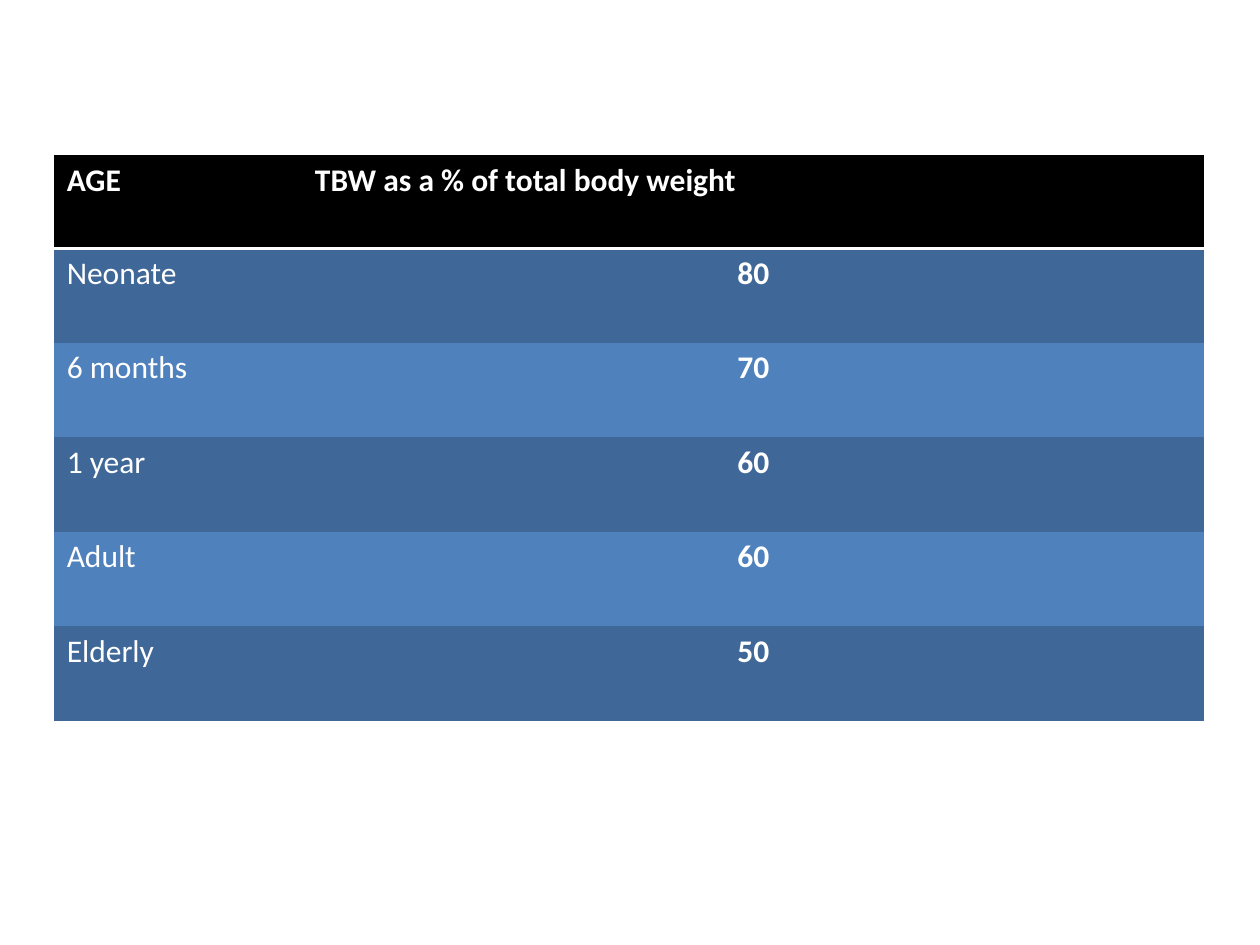
from lxml import etree
from pptx import Presentation
from pptx.dml.color import RGBColor as RGB
from pptx.enum.text import PP_ALIGN as ALIGN
from pptx.oxml import parse_xml
from pptx.oxml.ns import nsdecls, qn
from pptx.util import Inches, Pt

COLORS = {"header": "000000", "dark": "3F6797", "light": "4F81BD", "white": "FFFFFF"}
NO_STYLE = "{2D5ABB26-0587-4C30-8999-92F81FD0307C}"
HEADER = ("AGE", "TBW as a % of total body weight")
BODY_WATER = [
    ("Neonate", "80"),
    ("6 months", "70"),
    ("1 year", "60"),
    ("Adult", "60"),
    ("Elderly", "50"),
]
COL_WIDTHS = (1.97, 7.16)
HEADER_HEIGHT, ROW_HEIGHT = 0.74, 0.75


def fill_cell(cell, text, fill, bold=False, align=ALIGN.LEFT):
    cell.fill.solid()
    cell.fill.fore_color.rgb = RGB.from_string(COLORS[fill])
    p = cell.text_frame.paragraphs[0]
    p.alignment = align
    r = p.add_run()
    r.text = text
    r.font.name = "Calibri"
    r.font.size = Pt(18)
    r.font.bold = bold
    r.font.color.rgb = RGB.from_string(COLORS["white"])


def add_bottom_border(cell, color, width):
    border = parse_xml(
        f'<a:lnB {nsdecls("a")} w="{Pt(width)}"><a:solidFill>'
        f'<a:srgbClr val="{COLORS[color]}"/></a:solidFill></a:lnB>'
    )
    cell._tc.get_or_add_tcPr().insert(0, border)


def add_plain_table(s, rows, left, top):
    """Add an empty table with no style, so that only cell formats show."""
    height = HEADER_HEIGHT + ROW_HEIGHT * (rows - 1)
    frame = s.shapes.add_table(rows, len(COL_WIDTHS), Inches(left), Inches(top),
                               Inches(sum(COL_WIDTHS)), Inches(height))
    table = frame.table
    table.horz_banding = False
    table._tbl.tblPr.find(qn("a:tableStyleId")).text = NO_STYLE
    for column, width in zip(table.columns, COL_WIDTHS):
        column.width = Inches(width)
    for i, row in enumerate(table.rows):
        row.height = Inches(ROW_HEIGHT if i else HEADER_HEIGHT)
    return table


def main():
    prs = Presentation()
    prs.slide_width, prs.slide_height = Inches(10), Inches(7.5)
    s = prs.slides.add_slide(prs.slide_layouts[6])

    table = add_plain_table(s, len(BODY_WATER) + 1, 0.43, 1.23)
    for col, text in enumerate(HEADER):
        cell = table.cell(0, col)
        fill_cell(cell, text, "header", bold=True)
        add_bottom_border(cell, "white", 2)
    for row, (age, percent) in enumerate(BODY_WATER, start=1):
        band = "dark" if row % 2 else "light"
        fill_cell(table.cell(row, 0), age, band)
        fill_cell(table.cell(row, 1), percent, band, bold=True, align=ALIGN.CENTER)

    prs.save("out.pptx")


if __name__ == "__main__":
    main()
